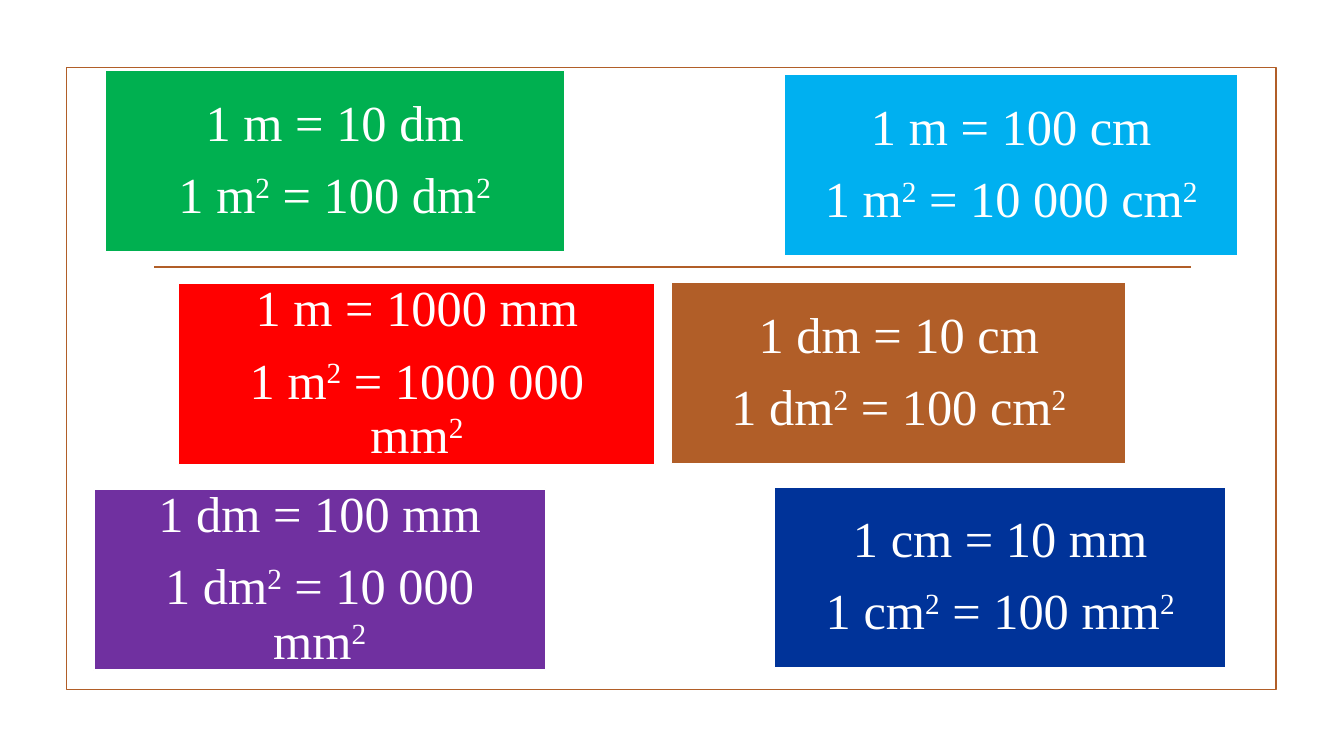
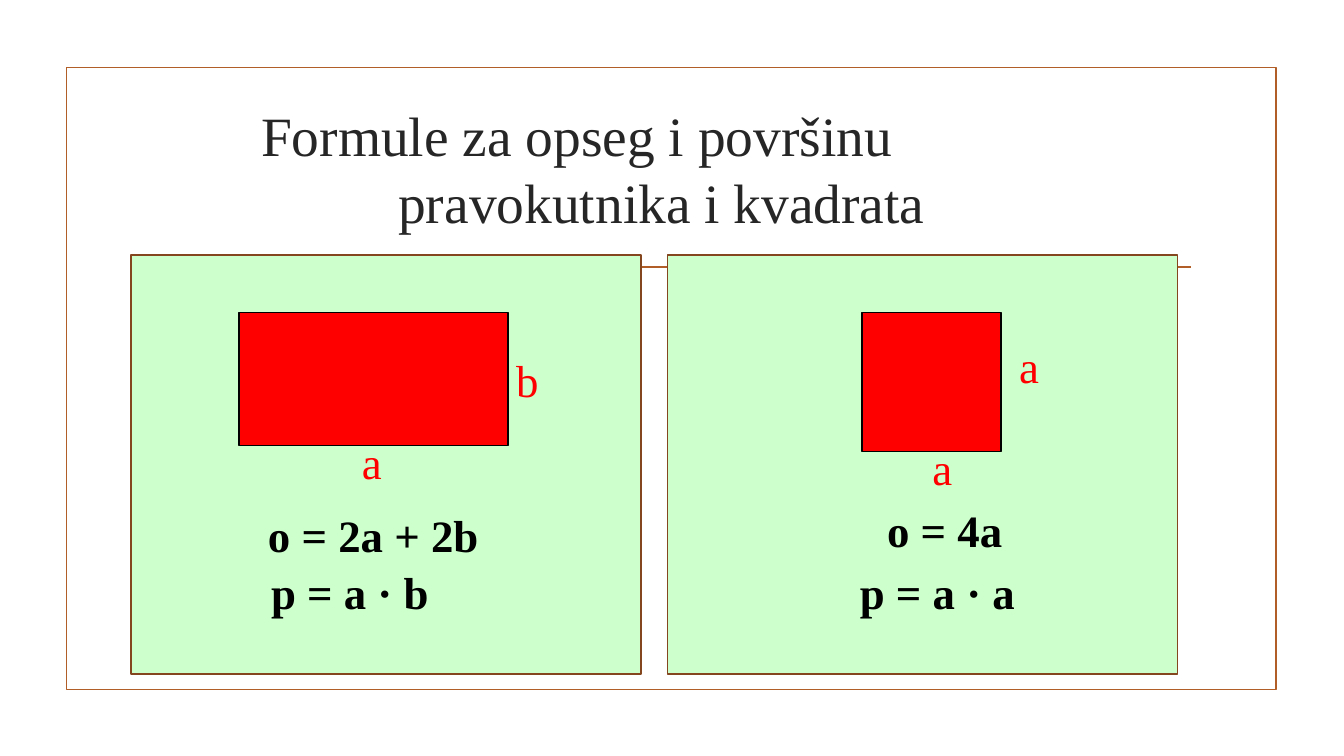
import pptx
import pptx.dml.color
import pptx.enum.shapes
import pptx.enum.text
import pptx.oxml.ns
import pptx.util
import lxml.etree

FONT = "Times New Roman"
RUST, BROWN, WHITE, BLACK = "B15E28", "83461E", "FFFFFF", "000000"
RED, MINT, CHARCOAL = "FF0000", "CCFFCC", "262626"
GRID = pptx.util.Inches(1)

CARDS = [
    ((1.04, 0.7, 4.56, 1.8), "00B050", ("m", "10", "dm", "100"), False),
    ((7.78, 0.74, 4.5, 1.8), "00B0F0", ("m", "100", "cm", "10 000"), False),
    ((1.77, 2.81, 4.73, 1.8), RED, ("m", "1000", "mm", "1000 000"), True),
    ((6.66, 2.8, 4.51, 1.8), RUST, ("dm", "10", "cm", "100"), False),
    ((0.93, 4.85, 4.48, 1.8), "7030A0", ("dm", "100", "mm", "10 000"), True),
    ((7.68, 4.83, 4.48, 1.8), "003399", ("cm", "10", "mm", "100"), False),
]

PANELS = [
    ((1.3, 2.53, 5.06, 4.16), (1.07, 0.57, 2.67, 1.32),
     [("a", 2.19, 1.73), ("b", 3.72, 0.92)],
     [("o = 2a + 2b", 1.26, 2.46), ("p = a · b", 1.29, 3.02)]),
    ((6.62, 2.53, 5.06, 4.16), (1.93, 0.57, 1.38, 1.38),
     [("a", 2.53, 1.79), ("a", 3.39, 0.78)],
     [("o = 4a", 2.08, 2.41), ("p = a · a", 1.81, 3.02)]),
]


def span(*cells):
    """Turn grid columns and rows into lengths."""
    return [pptx.util.Emu(round(cell * GRID)) for cell in cells]


def within(box, cells):
    """Shift a grid box by the corner of the box that holds it."""
    return (box[0] + cells[0], box[1] + cells[1], *cells[2:])


def paint(target, colour):
    """Give a fill or a font a solid colour from a hex string."""
    if hasattr(target, "solid"):
        target.solid()
        target = target.fore_color
    else:
        target = target.color
    target.rgb = pptx.dml.color.RGBColor.from_string(colour)


def outline(line, colour):
    """Draw a line in the shared weight."""
    paint(line.fill, colour)
    line.width = pptx.util.Pt(1.25)


def write(paragraph, text, size, colour, bold=False, raised=False):
    """Add one run in the shared typeface."""
    run = paragraph.add_run()
    run.text = text
    font = run.font
    font.name, font.size, font.bold = FONT, pptx.util.Pt(size), bold
    paint(font, colour)
    if raised:
        font._element.set("baseline", "30000")


def rectangle(slide, box, fill, line):
    """Place a flat rectangle, unfilled when fill is None."""
    block = slide.shapes.add_shape(
        pptx.enum.shapes.MSO_SHAPE.RECTANGLE, *span(*box))
    block.shadow.inherit = False
    if fill:
        paint(block.fill, fill)
    else:
        block.fill.background()
    outline(block.line, line)
    return block


def decorate_master(deck, slide):
    """Put the frame and the rule on the master for all slides."""
    frame = rectangle(slide, (0.66, 0.67, 12, 6.17), None, RUST)
    rule = slide.shapes.add_connector(
        pptx.enum.shapes.MSO_CONNECTOR.STRAIGHT, *span(1.53, 2.65, 11.81, 2.65))
    outline(rule.line, RUST)
    lxml.etree.SubElement(
        rule._element.spPr, pptx.oxml.ns.qn("a:effectLst"))
    tree = deck.slide_master.shapes.element
    for number, part in enumerate((frame, rule), 101):
        part._element.xpath("./*/p:cNvPr")[0].set("id", str(number))
        tree.append(part._element)


def conversion_card(slide, box, fill, units, wrapped):
    """Show a length conversion above its area conversion."""
    large, length, small, area = units
    frame = rectangle(slide, box, fill, WHITE).text_frame
    frame.word_wrap = True
    frame.vertical_anchor = pptx.enum.text.MSO_ANCHOR.MIDDLE
    frame.margin_left = frame.margin_right = span(0.15)[0]
    frame.margin_top = frame.margin_bottom = span(0.15)[0]
    lengths, areas = frame.paragraphs[0], frame.add_paragraph()
    for paragraph in (lengths, areas):
        paragraph.alignment = pptx.enum.text.PP_ALIGN.CENTER
        paragraph.line_spacing = 0.9
        paragraph.space_after = pptx.util.Pt(12.6)
    write(lengths, f"1 {large} = {length} {small}", 36, WHITE)
    write(areas, f"1 {large}", 36, WHITE)
    write(areas, "2", 36, WHITE, raised=True)
    if wrapped:
        write(areas, f" = {area}", 36, WHITE)
        areas.add_line_break()
        write(areas, small, 36, WHITE)
    else:
        write(areas, f" = {area} {small}", 36, WHITE)
    write(areas, "2", 36, WHITE, raised=True)


def caption(slide, box, text, colour, bold=False):
    """Place one line of text."""
    frame = slide.shapes.add_textbox(*span(*box)).text_frame
    frame.word_wrap = True
    write(frame.paragraphs[0], text, 32, colour, bold)


def formula_panel(slide, box, figure, sides, formulas):
    """Show a figure with its side names and formulas."""
    rectangle(slide, box, MINT, BROWN)
    rectangle(slide, within(box, figure), RED, BLACK)
    for text, column, row in sides:
        caption(slide, within(box, (column, row, 0.68, 0.64)), text, RED)
    for text, column, row in formulas:
        caption(slide, within(box, (column, row, 2.8, 0.64)), text, BLACK, True)


def heading(slide, box, lines):
    """Fill the title placeholder with two stepped lines."""
    title = slide.shapes.title
    title.left, title.top, title.width, title.height = span(*box)
    frame = title.text_frame
    frame.auto_size = pptx.enum.text.MSO_AUTO_SIZE.NONE
    frame.vertical_anchor = pptx.enum.text.MSO_ANCHOR.MIDDLE
    paragraph = frame.paragraphs[0]
    paragraph.alignment = pptx.enum.text.PP_ALIGN.LEFT
    margin, step = span(2.55, -1.36)
    properties = paragraph._p.get_or_add_pPr()
    properties.set("marL", str(margin))
    properties.set("indent", str(step))
    first, second = lines
    write(paragraph, first, 39.6, CHARCOAL)
    paragraph.add_line_break()
    write(paragraph, second, 39.6, CHARCOAL)


def main():
    """Build and save the two slides."""
    deck = pptx.Presentation()
    deck.slide_width, deck.slide_height = span(13.33, 7.5)
    conversions = deck.slides.add_slide(deck.slide_layouts[6])
    decorate_master(deck, conversions)
    for card in CARDS:
        conversion_card(conversions, *card)
    formulas = deck.slides.add_slide(deck.slide_layouts[5])
    heading(formulas, (1.3, 0.95, 10.5, 1.43),
            ("Formule za opseg i površinu", "pravokutnika i kvadrata"))
    for panel in PANELS:
        formula_panel(formulas, *panel)
    deck.save("out.pptx")


if __name__ == "__main__":
    main()
